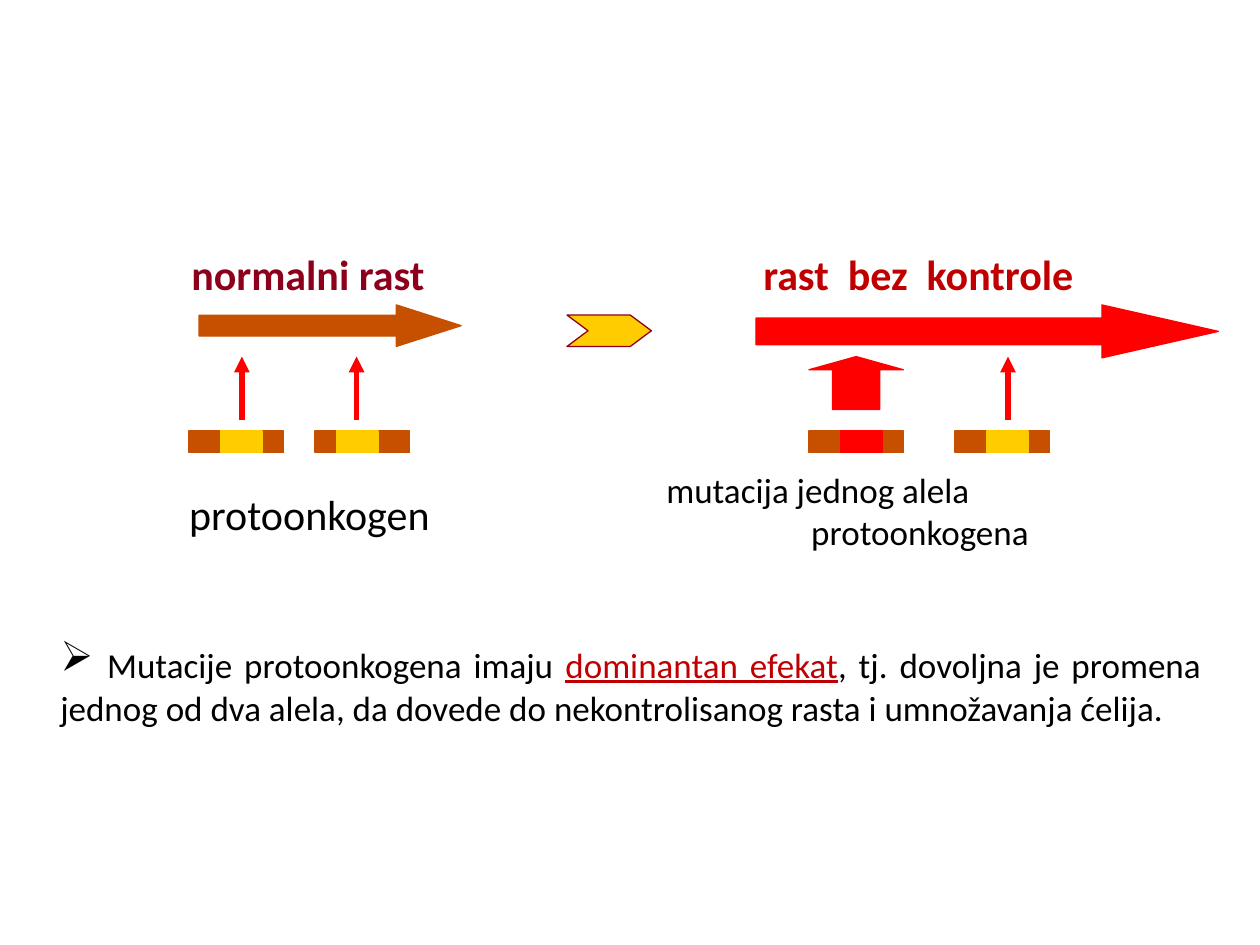
"""Build the slide on proto-oncogene mutations and uncontrolled growth."""
from dataclasses import dataclass, field

import pptx
import pptx.dml.color
import pptx.enum.shapes
import pptx.enum.text
import pptx.oxml
import pptx.oxml.ns
import pptx.util

Inches = pptx.util.Inches
SHAPE = pptx.enum.shapes.MSO_SHAPE
ALIGN = pptx.enum.text.PP_ALIGN
COLORS = {
    "brown": "C65000", "yellow": "FFCC00", "red": "FF0000",
    "wine": "8C001B", "crimson": "C00000", "black": "000000",
}


@dataclass
class Run:
    text: str
    size: int = 20
    color: str = "black"
    format: dict = field(default_factory=dict)


@dataclass
class Label:
    box: tuple
    runs: list
    align: ALIGN = ALIGN.LEFT
    margin: float = 0
    indent: float = 0
    bullet: str = ""


@dataclass
class Block:
    kind: SHAPE
    box: tuple
    fill: str
    line: str
    adjust: tuple = ()


@dataclass
class Allele:
    left: float
    gene_offset: float
    gene: str = "yellow"


def rgb(name: str) -> pptx.dml.color.RGBColor:
    return pptx.dml.color.RGBColor.from_string(COLORS[name])


def add_block(slide, block: Block) -> None:
    sp = slide.shapes.add_shape(block.kind, *map(Inches, block.box))
    sp.shadow.inherit = False
    for i, value in enumerate(block.adjust):
        sp.adjustments[i] = value
    sp.fill.solid()
    sp.fill.fore_color.rgb = rgb(block.fill)
    sp.line.color.rgb = rgb(block.line)
    sp.line.width = pptx.util.Pt(0.75)


def add_allele(slide, allele: Allele) -> None:
    gene_left = allele.left + allele.gene_offset
    for left, width, color in ((allele.left, 0.75, "brown"), (gene_left, 0.33, allele.gene)):
        add_block(slide, Block(SHAPE.RECTANGLE, (left, 3.42, width, 0.17), color, color))


def add_signal(slide, x: float) -> None:
    cxn = slide.shapes.add_connector(
        pptx.enum.shapes.MSO_CONNECTOR.STRAIGHT,
        Inches(x), Inches(3.33), Inches(x), Inches(2.83))
    cxn.line.color.rgb = rgb("red")
    cxn.line.width = pptx.util.Pt(3)
    ln = cxn.line._get_or_add_ln()
    tail = pptx.oxml.parse_xml(
        f'<a:tailEnd {pptx.oxml.ns.nsdecls("a")} type="triangle"/>')
    ln.append(tail)
    cxn._element.spPr.append(
        pptx.oxml.parse_xml(f'<a:effectLst {pptx.oxml.ns.nsdecls("a")}/>'))


def add_label(slide, label: Label) -> None:
    tf = slide.shapes.add_textbox(*map(Inches, label.box)).text_frame
    tf.word_wrap = True
    p = tf.paragraphs[0]
    p.alignment = label.align
    pPr = p._p.get_or_add_pPr()
    pPr.set("marL", str(Inches(label.margin)))
    pPr.set("indent", str(Inches(label.indent)))
    if label.bullet:
        pPr.append(pptx.oxml.parse_xml(
            f'<a:buChar {pptx.oxml.ns.nsdecls("a")} char="{label.bullet}"/>'))
    for run in label.runs:
        r = p.add_run()
        r.text = run.text
        values = {"name": "Calibri", "size": pptx.util.Pt(run.size), **run.format}
        for key, value in values.items():
            setattr(r.font, key, value)
        r.font.color.rgb = rgb(run.color)


BLOCKS = [
    Block(SHAPE.UP_ARROW, (6.42, 2.83, 0.75, 0.42), "red", "red", (0.5, 0.25)),
    Block(SHAPE.RIGHT_ARROW, (1.58, 2.42, 2.08, 0.33), "brown", "brown", (0.5, 1.56)),
    Block(SHAPE.CHEVRON, (4.5, 2.5, 0.67, 0.25), "yellow", "wine", (0.67,)),
    Block(SHAPE.RIGHT_ARROW, (6, 2.42, 3.67, 0.42), "red", "red", (0.5, 2.2)),
]
ALLELES = [Allele(1.5, 0.25), Allele(2.5, 0.17), Allele(6.42, 0.25, "red"), Allele(7.58, 0.25)]
SIGNALS = [1.92, 2.83, 8]
LABELS = [
    Label((1.42, 1.92, 2.58, 0.5), [Run("normalni rast", 24, "wine", {"bold": True})]),
    Label((5.96, 1.92, 2.84, 0.5), [Run("rast  bez  kontrole", 24, "crimson", {"bold": True})]),
    Label((1.08, 3.83, 2.75, 0.5), [Run("protoonkogen", 24)], ALIGN.CENTER),
    Label((5.17, 3.67, 3.33, 0.77), [Run("mutacija jednog alela protoonkogena")],
          margin=1.17, indent=-1.15),
    Label((0.38, 5, 9.25, 0.84), [
        Run(" ", 24),
        Run("Mutacije protoonkogena imaju "),
        Run("dominantan efekat", color="crimson", format={"underline": True}),
        Run(", tj. dovoljna je promena jednog od dva alela, da dovede do "
            "nekontrolisanog rasta i umnožavanja ćelija."),
    ], ALIGN.JUSTIFY, bullet="➢"),
]


def main() -> None:
    prs = pptx.Presentation()
    prs.slide_width, prs.slide_height = Inches(10), Inches(7.5)
    slide = prs.slides.add_slide(prs.slide_layouts[6])
    for draw, items in ((add_block, BLOCKS), (add_allele, ALLELES),
                        (add_signal, SIGNALS), (add_label, LABELS)):
        for item in items:
            draw(slide, item)
    prs.save("out.pptx")


if __name__ == "__main__":
    main()
